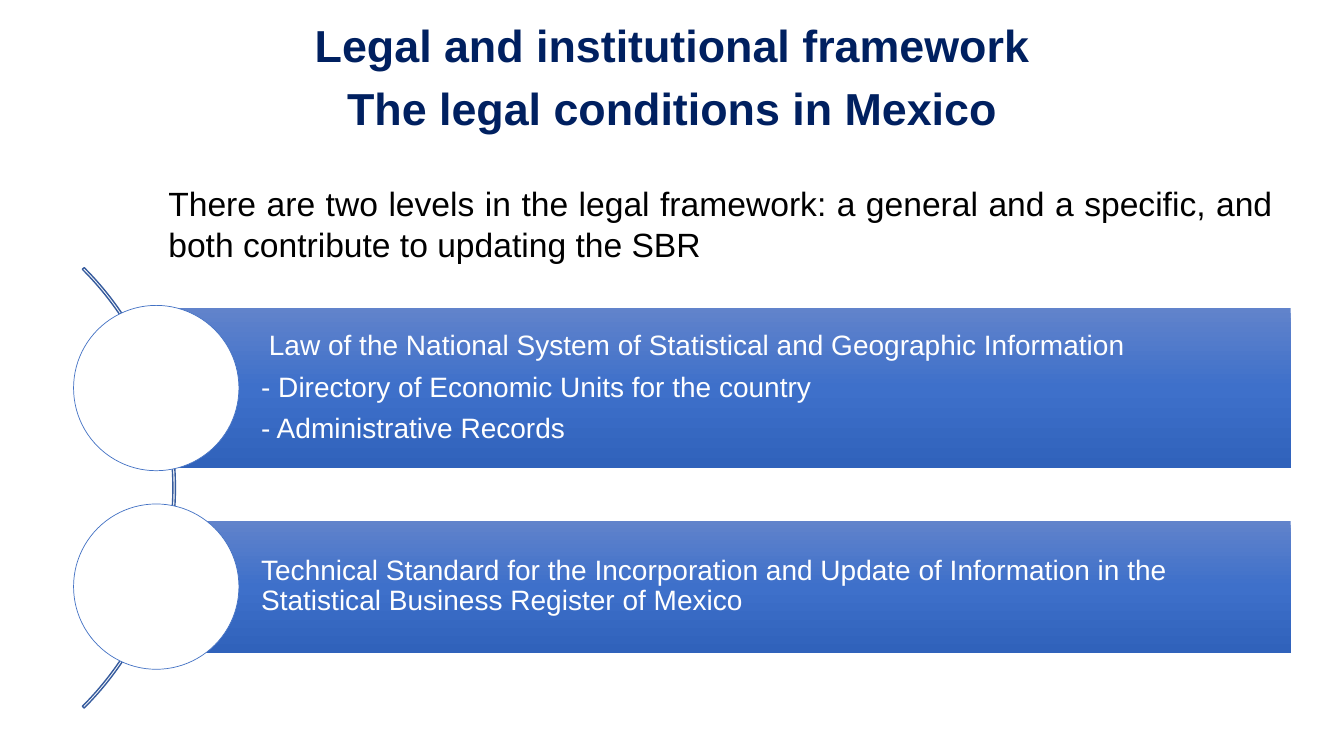
from copy import deepcopy

from pptx import Presentation
from pptx.dml.color import RGBColor
from pptx.enum.shapes import MSO_SHAPE
from pptx.enum.text import MSO_ANCHOR, PP_ALIGN
from pptx.oxml.ns import qn
from pptx.util import Inches, Pt

# Content
TITLE = ["Legal and institutional framework", "The legal conditions in Mexico"]
INTRO = ("There are two levels in the legal framework: a general and a specific, "
         "and both contribute to updating the SBR")
LEVELS = [  # band height, lines of text
    (1.58, [" Law of the National System of Statistical and Geographic Information",
            "- Directory of Economic Units for the country",
            "- Administrative Records"]),
    (1.31, ["Technical Standard for the Incorporation and Update of Information "
            "in the Statistical Business Register of Mexico"]),
]
COLORS = {"title": "002060", "intro": "000000", "band_text": "FFFFFF",
          "circle": "FFFFFF", "circle_line": "4472C4", "arc": "365B9D"}
BAND_GRADIENT = [(0, "6183CB"), (0.5, "3E70CA"), (1, "3062BB")]
FONT = "Arial"

# Layout in inches
WIDTH, HEIGHT = 13.33, 7.5
BAND_LEFT, BAND_WIDTH = 1.55, 11.25
CIRCLE = 1.64
FIRST_CENTER, PITCH = 3.85, 1.97
ARC_LEFT, ARC_TOP, ARC_SIZE = -4.44, 1.75, 6.18


def color(name):
    return RGBColor.from_string(COLORS[name])


def write(frame, lines, size, color_name, bold=False, align=PP_ALIGN.LEFT,
          spacing=None, before=0, after=0):
    frame.word_wrap = True
    for i, line in enumerate(lines):
        paragraph = frame.add_paragraph() if i else frame.paragraphs[0]
        paragraph.alignment = align
        paragraph.line_spacing = spacing
        paragraph.space_before = Pt(before if i else 0)
        paragraph.space_after = Pt(after)
        run = paragraph.add_run()
        run.text = line
        run.font.name, run.font.size, run.font.bold = FONT, Pt(size), bold
        run.font.color.rgb = color(color_name)


def add_shape(kind, left, top, width, height):
    shape = slide.shapes.add_shape(kind, *map(Inches, (left, top, width, height)))
    shape.shadow.inherit = False
    return shape


def outline(shape, color_name, points):
    shape.line.color.rgb = color(color_name)
    shape.line.width = Pt(points)


def fill_band(band):
    band.fill.gradient()
    band.fill.gradient_angle = 270
    stop_list = band._element.spPr.find(".//" + qn("a:gsLst"))
    stop_list.append(deepcopy(stop_list[0]))
    for stop, (position, rgb) in zip(band.fill.gradient_stops, BAND_GRADIENT):
        stop.position = position
        stop.color.rgb = RGBColor.from_string(rgb)
    band.line.fill.background()


prs = Presentation()
prs.slide_width, prs.slide_height = Inches(WIDTH), Inches(HEIGHT)
slide = prs.slides.add_slide(prs.slide_layouts[6])

# Title
title = slide.shapes.add_textbox(*map(Inches, (1.72, 0.19, 9.9, 1.25)))
write(title.text_frame, TITLE, 32, "title", bold=True, align=PP_ALIGN.CENTER,
      spacing=0.9, before=10)

# Arc joining the levels
arc = add_shape(MSO_SHAPE.BLOCK_ARC, ARC_LEFT, ARC_TOP, ARC_SIZE, ARC_SIZE)
for i, adjustment in enumerate((189, 27, 0.004)):
    arc.adjustments[i] = adjustment
arc.fill.background()
outline(arc, "arc", 1)

# Levels: a band with a circle on its left edge
for i, (band_height, lines) in enumerate(LEVELS):
    center = FIRST_CENTER + i * PITCH
    band = add_shape(MSO_SHAPE.RECTANGLE, BAND_LEFT, center - band_height / 2,
                     BAND_WIDTH, band_height)
    fill_band(band)
    frame = band.text_frame
    frame.vertical_anchor = MSO_ANCHOR.MIDDLE
    frame.margin_left = Inches(1.04)
    frame.margin_top = frame.margin_right = frame.margin_bottom = Inches(0.06)
    write(frame, lines, 20, "band_text", spacing=0.9, after=8)

    circle = add_shape(MSO_SHAPE.OVAL, BAND_LEFT - CIRCLE / 2, center - CIRCLE / 2,
                       CIRCLE, CIRCLE)
    circle.fill.solid()
    circle.fill.fore_color.rgb = color("circle")
    outline(circle, "circle_line", 0.5)

# Introduction
intro = slide.shapes.add_textbox(*map(Inches, (1.54, 1.77, 11.18, 0.91)))
intro.text_frame.margin_left = Inches(0.13)
write(intro.text_frame, [INTRO], 24, "intro", align=PP_ALIGN.JUSTIFY, after=8)

prs.save("out.pptx")
